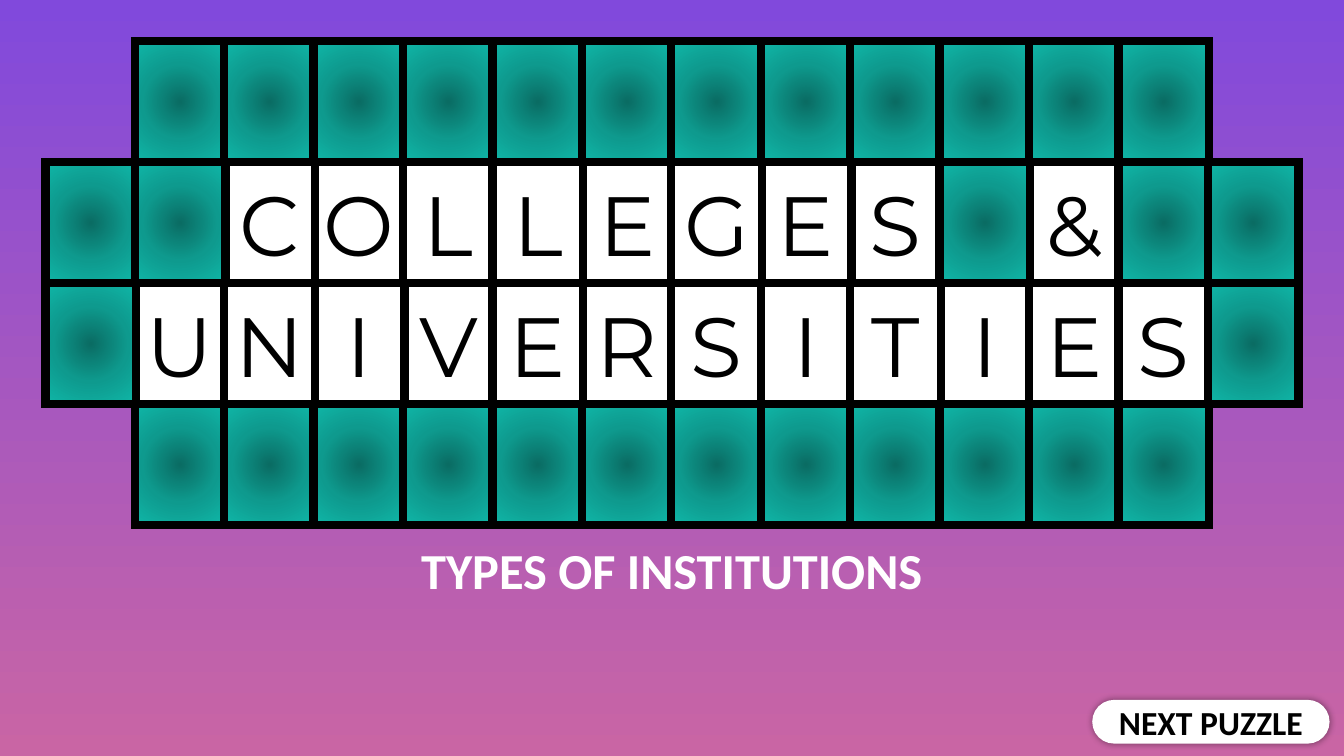
import pptx
import pptx.dml.color
import pptx.enum.shapes
import pptx.enum.text
import pptx.oxml
import pptx.oxml.ns
import pptx.util

Inches = pptx.util.Inches
Pt = pptx.util.Pt
RGBColor = pptx.dml.color.RGBColor
MSO_SHAPE = pptx.enum.shapes.MSO_SHAPE
qn = pptx.oxml.ns.qn

PURPLE = RGBColor(0x81, 0x49, 0xDC)
PINK = RGBColor(0xC9, 0x65, 0xA4)
DARK_TEAL = RGBColor(0x0A, 0x6C, 0x63)
TEAL = RGBColor(0x0E, 0x9A, 0x8E)
LIGHT_TEAL = RGBColor(0x10, 0xB7, 0xA8)
WHITE = RGBColor(0xFF, 0xFF, 0xFF)
BLACK = RGBColor(0x00, 0x00, 0x00)

LETTER_FONT = {"name": "Montserrat", "size": Pt(60)}
CATEGORY_FONT = {"name": "Calibri", "size": Pt(36), "bold": True}
BUTTON_FONT = {"name": "Calibri", "size": Pt(24), "bold": True}

BOARD_ROWS = [
    " ############ ",
    "##COLLEGES#&##",
    "#UNIVERSITIES#",
    " ############ ",
]
BOARD_LEFT, BOARD_TOP = 0.45, 0.41
COLUMN_STEP, ROW_STEP = 11.53 / 13, 1.2
TILE_WIDTH, TILE_HEIGHT = 0.9, 1.2

BACK_LETTERS = [(1, column) for column in (3, 2, 9, 11)]
BACK_LETTERS += [(2, column) for column in (4, 1, 10, 3, 2, 6, 7, 5, 8, 9, 11, 12)]
TEAL_TILES = [
    (row, column)
    for row, letters in enumerate(BOARD_ROWS)
    for column, letter in enumerate(letters)
    if letter == "#"
]
FRONT_LETTERS = [(1, column) for column in (4, 6, 5, 8, 7)]

NAMESPACE = pptx.oxml.ns.nsdecls("a")
TEAL_STOPS = "".join(
    f'<a:gs pos="{position}"><a:srgbClr val="{color}"/></a:gs>'
    for position, color in ((0, DARK_TEAL), (50000, TEAL), (100000, LIGHT_TEAL))
)
TEAL_GLOW = (
    f'<a:gradFill {NAMESPACE} rotWithShape="1"><a:gsLst>{TEAL_STOPS}</a:gsLst>'
    '<a:path path="circle"><a:fillToRect l="50000" t="50000" r="50000" b="50000"/></a:path>'
    "</a:gradFill>"
)
SHARP_CORNER = f'<a:miter {NAMESPACE} lim="800000"/>'
BUTTON_SHADOW = (
    f'<a:outerShdw {NAMESPACE} blurRad="63500" dist="0" dir="0" algn="ctr" rotWithShape="0">'
    f'<a:srgbClr val="{BLACK}"><a:alpha val="40000"/></a:srgbClr></a:outerShdw>'
)


def add_panel(preset, left, top, width, height, line_color, line_width):
    panel = slide.shapes.add_shape(
        preset, Inches(left), Inches(top), Inches(width), Inches(height)
    )
    panel.shadow.inherit = False
    panel.fill.solid()
    panel.fill.fore_color.rgb = WHITE
    panel.line.color.rgb = line_color
    panel.line.width = Pt(line_width)
    panel._element.spPr.find(qn("a:ln")).append(pptx.oxml.parse_xml(SHARP_CORNER))
    return panel


def write(holder, text, color, font_format):
    frame = holder.text_frame
    frame.word_wrap = True
    frame.vertical_anchor = pptx.enum.text.MSO_ANCHOR.MIDDLE
    paragraph = frame.paragraphs[0]
    paragraph.alignment = pptx.enum.text.PP_ALIGN.CENTER
    run = paragraph.add_run()
    run.text = text
    run.font.color.rgb = color
    for attribute, value in font_format.items():
        setattr(run.font, attribute, value)


presentation = pptx.Presentation()
presentation.slide_width = Inches(13.33)
presentation.slide_height = Inches(7.5)
slide = presentation.slides.add_slide(presentation.slide_layouts[6])

backdrop = slide.background.fill
backdrop.gradient()
backdrop.gradient_angle = 270
for stop, color in zip(backdrop.gradient_stops, (PURPLE, PINK)):
    stop.color.rgb = color

for row, column in BACK_LETTERS + TEAL_TILES + FRONT_LETTERS:
    letter = BOARD_ROWS[row][column]
    tile = add_panel(
        MSO_SHAPE.RECTANGLE,
        BOARD_LEFT + column * COLUMN_STEP,
        BOARD_TOP + row * ROW_STEP,
        TILE_WIDTH,
        TILE_HEIGHT,
        BLACK,
        6,
    )
    if letter == "#":
        properties = tile._element.spPr
        plain_fill = properties.find(qn("a:solidFill"))
        properties.replace(plain_fill, pptx.oxml.parse_xml(TEAL_GLOW))
    else:
        write(tile, letter, BLACK, LETTER_FONT)

category = slide.shapes.add_textbox(Inches(0), Inches(5.34), Inches(13.33), Inches(0.62))
write(category, "TYPES OF INSTITUTIONS", WHITE, CATEGORY_FONT)

next_button = add_panel(MSO_SHAPE.ROUNDED_RECTANGLE, 10.84, 6.95, 2.34, 0.42, WHITE, 1)
next_button.adjustments[0] = 0.5
button_effects = next_button._element.spPr.find(qn("a:effectLst"))
button_effects.append(pptx.oxml.parse_xml(BUTTON_SHADOW))
write(next_button, "NEXT PUZZLE", BLACK, BUTTON_FONT)

presentation.save("out.pptx")
